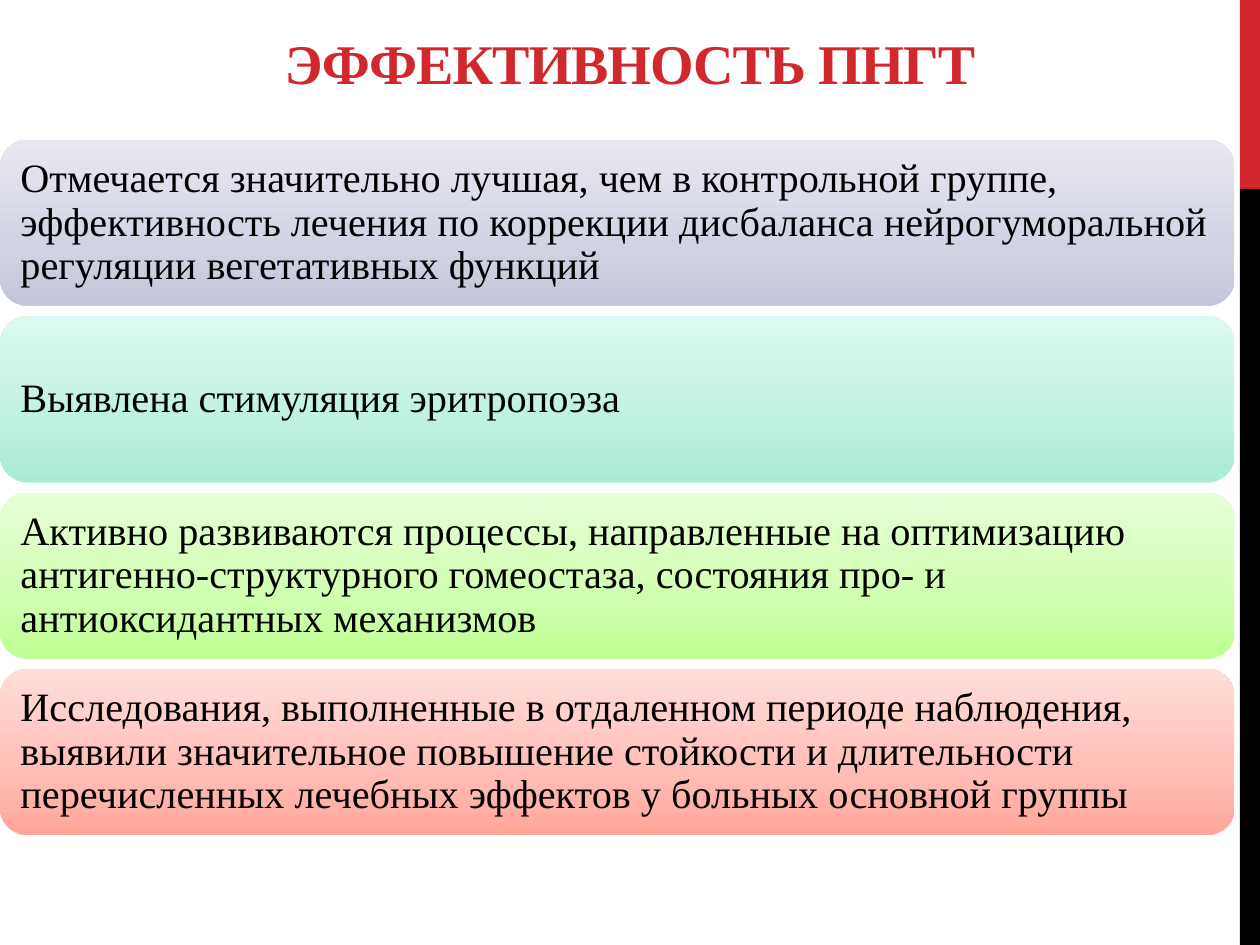
import copy

import pptx
import pptx.dml.color
import pptx.enum.shapes
import pptx.enum.text
import pptx.util

Inches = pptx.util.Inches
Color = pptx.dml.color.RGBColor
Shape = pptx.enum.shapes.MSO_SHAPE
Align = pptx.enum.text.PP_ALIGN

RED = Color(0xD1, 0x28, 0x2E)
BLACK = Color(0x00, 0x00, 0x00)

# Each gradient runs from the bottom of a card to its top
STOPS = (0, 0.35, 1)
BLUE = (Color(0xC3, 0xC5, 0xD9), Color(0xD1, 0xD3, 0xE3), Color(0xE8, 0xE8, 0xF1))
MINT = (Color(0xA9, 0xEC, 0xD5), Color(0xBD, 0xF2, 0xDF), Color(0xDD, 0xF9, 0xEF))
LIME = (Color(0xBF, 0xFF, 0x93), Color(0xCE, 0xFF, 0xAF), Color(0xE6, 0xFF, 0xD7))
ROSE = (Color(0xFF, 0xA6, 0x98), Color(0xFF, 0xBC, 0xB3), Color(0xFF, 0xDE, 0xD9))

CARDS = [
    (BLUE, "Отмечается значительно лучшая, чем в контрольной группе, "
           "эффективность лечения по коррекции дисбаланса нейрогуморальной "
           "регуляции вегетативных функций"),
    (MINT, "Выявлена стимуляция эритропоэза"),
    (LIME, "Активно развиваются процессы, направленные на оптимизацию "
           "антигенно-структурного гомеостаза, состояния про- и "
           "антиоксидантных механизмов"),
    (ROSE, "Исследования, выполненные в отдаленном периоде наблюдения, "
           "выявили значительное повышение стойкости и длительности "
           "перечисленных лечебных эффектов у больных основной группы"),
]
TOP, STEP = 1.11, 1.4


class Page:
    font = "Times New Roman"

    def __init__(self, slide):
        self.slide = slide

    def shape(self, kind, x, y, w, h):
        item = self.slide.shapes.add_shape(
            kind, Inches(x), Inches(y), Inches(w), Inches(h))
        item.shadow.inherit = False
        item.line.fill.background()
        return item

    def label(self, item, text, size, color, align, bold=False):
        frame = item.text_frame
        frame.word_wrap = True
        frame.vertical_anchor = pptx.enum.text.MSO_ANCHOR.MIDDLE
        para = frame.paragraphs[0]
        para.text = text
        para.alignment = align
        para.font.name = self.font
        para.font.size = pptx.util.Pt(size)
        para.font.bold = bold
        para.font.color.rgb = color
        return frame

    def bar(self, y, h, color):
        fill = self.shape(Shape.RECTANGLE, 9.84, y, 0.16, h).fill
        fill.solid()
        fill.fore_color.rgb = color

    def title(self, text):
        box = self.slide.shapes.add_textbox(0, 0, Inches(10), Inches(0.99))
        frame = self.label(box, text, 32, RED, Align.CENTER, bold=True)
        # Tighten the letters by 0.6 pt
        frame.paragraphs[0].runs[0].font._element.set("spc", "-60")

    def card(self, y, tones, text):
        item = self.shape(Shape.ROUNDED_RECTANGLE, 0, y, 9.8, 1.32)
        self.blend(item.fill, tones)
        frame = self.label(item, text, 23, BLACK, Align.LEFT)
        frame.paragraphs[0].line_spacing = 0.9
        frame.margin_left = frame.margin_right = Inches(0.1)
        frame.margin_top = frame.margin_bottom = Inches(0.1)

    def blend(self, fill, tones):
        fill.gradient()
        fill.gradient_angle = 90
        # A new gradient has two stops; add the middle one
        first = fill.gradient_stops[0]._gs
        first.addnext(copy.deepcopy(first))
        for stop, place, tone in zip(fill.gradient_stops, STOPS, tones):
            stop.position = place
            stop.color.rgb = tone


def main():
    deck = pptx.Presentation()
    deck.slide_width, deck.slide_height = Inches(10), Inches(7.5)
    page = Page(deck.slides.add_slide(deck.slide_layouts[6]))

    # Side stripe
    page.bar(0, 1.5, RED)
    page.bar(1.5, 6, BLACK)

    # Heading and cards
    page.title("ЭФФЕКТИВНОСТЬ ПНГТ")
    for row, (tones, text) in enumerate(CARDS):
        page.card(TOP + row * STEP, tones, text)

    deck.save("out.pptx")


if __name__ == "__main__":
    main()
